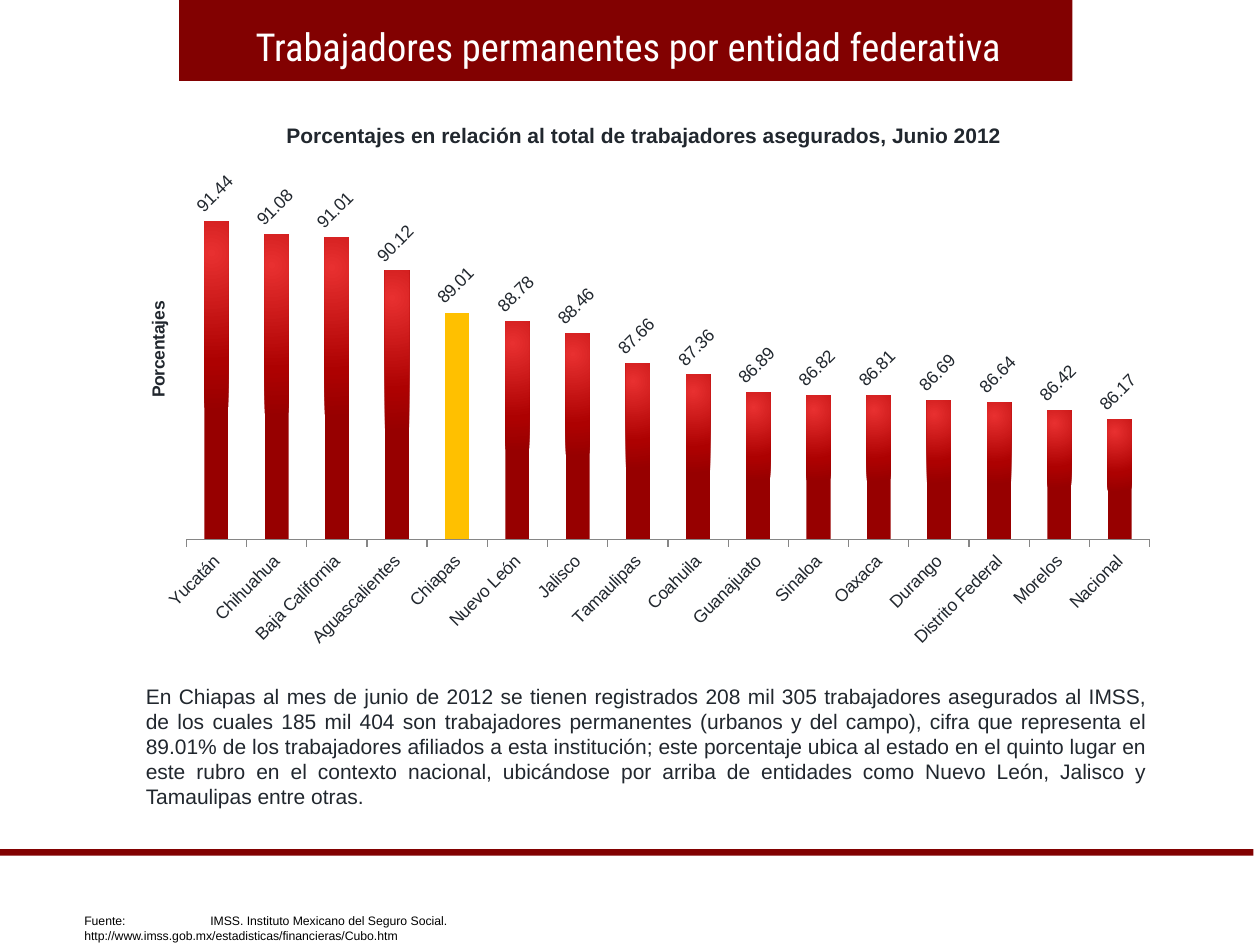
"""Build the slide on permanent workers by Mexican state."""
from dataclasses import dataclass

from pptx import Presentation
from pptx import util as u
from pptx.chart.data import CategoryChartData
from pptx.dml.color import RGBColor
from pptx.enum import chart as charts, shapes, text
from pptx.oxml import parse_xml
from pptx.oxml.ns import nsdecls, qn

MAROON = RGBColor(0x82, 0x01, 0x01)
RED = RGBColor(0xAD, 0x01, 0x01)
LIGHT_RED = RGBColor(0xE8, 0x30, 0x30)
DARK_RED = RGBColor(0x97, 0x00, 0x00)
GOLD = RGBColor(0xFF, 0xC0, 0x00)
INK = RGBColor(0x21, 0x27, 0x2E)
GRAY = RGBColor(0x86, 0x86, 0x86)
WHITE = RGBColor(0xFF, 0xFF, 0xFF)
BLACK = RGBColor(0, 0, 0)
NUMBER_FORMAT = r"#,##0.00_ ;\-#,##0.00\ "
HIGHLIGHT = "Chiapas"
PERCENTAGES = {
    "Yucatán": 91.44, "Chihuahua": 91.08, "Baja California": 91.01,
    "Aguascalientes": 90.12, "Chiapas": 89.01, "Nuevo León": 88.78,
    "Jalisco": 88.46, "Tamaulipas": 87.66, "Coahuila": 87.36,
    "Guanajuato": 86.89, "Sinaloa": 86.82, "Oaxaca": 86.81,
    "Durango": 86.69, "Distrito Federal": 86.64, "Morelos": 86.42,
    "Nacional": 86.17,
}


@dataclass(frozen=True)
class Box:
    left: float
    top: float
    width: float
    height: float

    def lengths(self) -> tuple:
        return tuple(u.Cm(n) for n in (self.left, self.top, self.width, self.height))


@dataclass(frozen=True)
class Style:
    size: float
    color: RGBColor
    name: str = "Arial"
    bold: bool = False


BANDS = [Box(3.61, 0, 18.01, 1.63), Box(0, 17.12, 25.27, 0.13)]
TITLE = Box(3.71, 0.33, 17.91, 1.19)
SUBTITLE = Box(3.61, 2.34, 18.75, 0.76)
CHART = Box(2.69, 3.4, 20.5, 10.03)
COMMENT = Box(2.69, 13.44, 20.7, 3.2)
SOURCE = Box(1.45, 18.29, 12.9, 0.56)


def apply_style(font, style: Style) -> None:
    font.size = u.Pt(style.size)
    font.name = style.name
    font.bold = style.bold
    font.color.rgb = style.color


def add_run(paragraph, words: str, style: Style) -> None:
    run = paragraph.add_run()
    run.text = words
    apply_style(run.font, style)


def add_band(slide, box: Box) -> None:
    band = slide.shapes.add_shape(shapes.MSO_SHAPE.RECTANGLE, *box.lengths())
    band.shadow.inherit = False
    band.fill.solid()
    band.fill.fore_color.rgb = MAROON
    band.line.fill.background()


def add_title(slide) -> None:
    title = slide.shapes.title
    title.left, title.top, title.width, title.height = TITLE.lengths()
    slide.shapes._spTree.append(title._element)
    frame = title.text_frame
    frame.vertical_anchor = text.MSO_ANCHOR.MIDDLE
    paragraph = frame.paragraphs[0]
    paragraph.alignment = text.PP_ALIGN.CENTER
    add_run(paragraph, "Trabajadores permanentes por entidad federativa",
            Style(22, WHITE, "Roboto Condensed"))


def add_subtitle(slide) -> None:
    frame = slide.shapes.add_textbox(*SUBTITLE.lengths()).text_frame
    frame.word_wrap = True
    paragraph = frame.paragraphs[0]
    paragraph.alignment = text.PP_ALIGN.CENTER
    add_run(paragraph, "Porcentajes en relación al total de trabajadores asegurados, Junio 2012",
            Style(12, INK, bold=True))


def add_comment(slide) -> None:
    shape = slide.shapes.add_shape(shapes.MSO_SHAPE.ROUNDED_RECTANGLE, *COMMENT.lengths())
    shape.adjustments[0] = 0
    shape.shadow.inherit = False
    shape.fill.background()
    shape.line.fill.background()
    frame = shape.text_frame
    frame.word_wrap = True
    frame.vertical_anchor = text.MSO_ANCHOR.MIDDLE
    paragraph = frame.paragraphs[0]
    paragraph.alignment = text.PP_ALIGN.JUSTIFY
    add_run(paragraph, (
        "En Chiapas al mes de junio de 2012 se tienen registrados 208 mil 305 trabajadores "
        "asegurados al IMSS, de los cuales 185 mil 404 son trabajadores permanentes (urbanos y "
        "del campo), cifra que representa el 89.01% de los trabajadores afiliados a esta "
        "institución; este porcentaje ubica al estado en el quinto lugar en este rubro en el "
        "contexto nacional, ubicándose por arriba de entidades como Nuevo León, Jalisco y "
        "Tamaulipas entre otras."), Style(12, INK))


def add_source(slide) -> None:
    frame = slide.shapes.add_textbox(*SOURCE.lengths()).text_frame
    frame.word_wrap = False
    paragraph = frame.paragraphs[0]
    paragraph._p.get_or_add_pPr().append(parse_xml(
        f'<a:tabLst {nsdecls("a")}><a:tab pos="{u.Cm(2.54)}" algn="l"/></a:tabLst>'))
    style = Style(7, BLACK)
    add_run(paragraph, "Fuente:\tIMSS. Instituto Mexicano del Seguro Social.", style)
    paragraph.add_line_break()
    add_run(paragraph, "http://www.imss.gob.mx/estadisticas/financieras/Cubo.htm", style)


def rotate_text(element, degrees: int) -> None:
    body = element.find(".//" + qn("a:bodyPr"))
    body.set("rot", str(degrees * 60000))
    body.set("vert", "horz")


def set_layout(element, index: int, target: str = "", **fractions: float) -> None:
    for old in element.findall(qn("c:layout")):
        element.remove(old)
    inner = f'<c:layoutTarget val="{target}"/>' if target else ""
    modes = "".join(f'<c:{key}Mode val="edge"/>' for key in "xy")
    values = "".join(f'<c:{key} val="{value}"/>' for key, value in fractions.items())
    element.insert(index, parse_xml(
        f'<c:layout {nsdecls("c")}><c:manualLayout>{inner}{modes}{values}'
        '</c:manualLayout></c:layout>'))


def fill_radially(series) -> None:
    series.format.fill.solid()
    solid = series._element.find(".//" + qn("a:solidFill"))
    stops = "".join(
        f'<a:gs pos="{position}"><a:srgbClr val="{color}"/></a:gs>'
        for position, color in ((0, LIGHT_RED), (68000, RED), (100000, DARK_RED)))
    solid.getparent().replace(solid, parse_xml(
        f'<a:gradFill {nsdecls("a")} rotWithShape="1"><a:gsLst>{stops}</a:gsLst>'
        '<a:path path="circle"><a:fillToRect l="30000" t="10000" r="70000" b="90000"/>'
        '</a:path></a:gradFill>'))


def add_percentage_chart(slide) -> None:
    data = CategoryChartData(number_format=NUMBER_FORMAT)
    data.categories = list(PERCENTAGES)
    data.add_series("Series 1", list(PERCENTAGES.values()))
    chart = slide.shapes.add_chart(
        charts.XL_CHART_TYPE.COLUMN_CLUSTERED, *CHART.lengths(), data).chart
    style = Style(10, INK)
    apply_style(chart.font, style)
    chart.has_legend = False
    chart.has_title = False
    plot = chart.plots[0]
    plot.gap_width = 150
    plot.vary_by_categories = False
    set_layout(chart._chartSpace.chart.plotArea, 0, "inner", x=0.052, y=0.063, w=0.948, h=0.682)

    series = plot.series[0]
    fill_radially(series)
    point = series.points[list(PERCENTAGES).index(HIGHLIGHT)]
    point.format.fill.solid()
    point.format.fill.fore_color.rgb = GOLD
    labels = series.data_labels
    labels.show_value = True
    labels.number_format = NUMBER_FORMAT
    labels.number_format_is_linked = False
    labels.position = charts.XL_LABEL_POSITION.OUTSIDE_END
    apply_style(labels.font, style)
    rotate_text(labels._element, -45)

    states = chart.category_axis
    states.major_tick_mark = charts.XL_TICK_MARK.OUTSIDE
    states.format.line.color.rgb = GRAY
    apply_style(states.tick_labels.font, style)
    rotate_text(states._element, -45)

    values = chart.value_axis
    values.minimum_scale, values.maximum_scale = 83, 92
    values.has_major_gridlines = False
    values.tick_labels.number_format = NUMBER_FORMAT
    values.tick_labels.number_format_is_linked = False
    values.visible = False
    title = values.axis_title
    add_run(title.text_frame.paragraphs[0], "Porcentajes", Style(10, INK, bold=True))
    rotate_text(title._element, -90)
    set_layout(title._element, 1, x=0.01, y=0.26)


def main() -> None:
    presentation = Presentation()
    presentation.slide_width, presentation.slide_height = u.Cm(25.4), u.Cm(19.05)
    slide = presentation.slides.add_slide(presentation.slide_layouts[5])
    for band in BANDS:
        add_band(slide, band)
    add_comment(slide)
    add_subtitle(slide)
    add_source(slide)
    add_title(slide)
    add_percentage_chart(slide)
    presentation.save("out.pptx")


if __name__ == "__main__":
    main()
